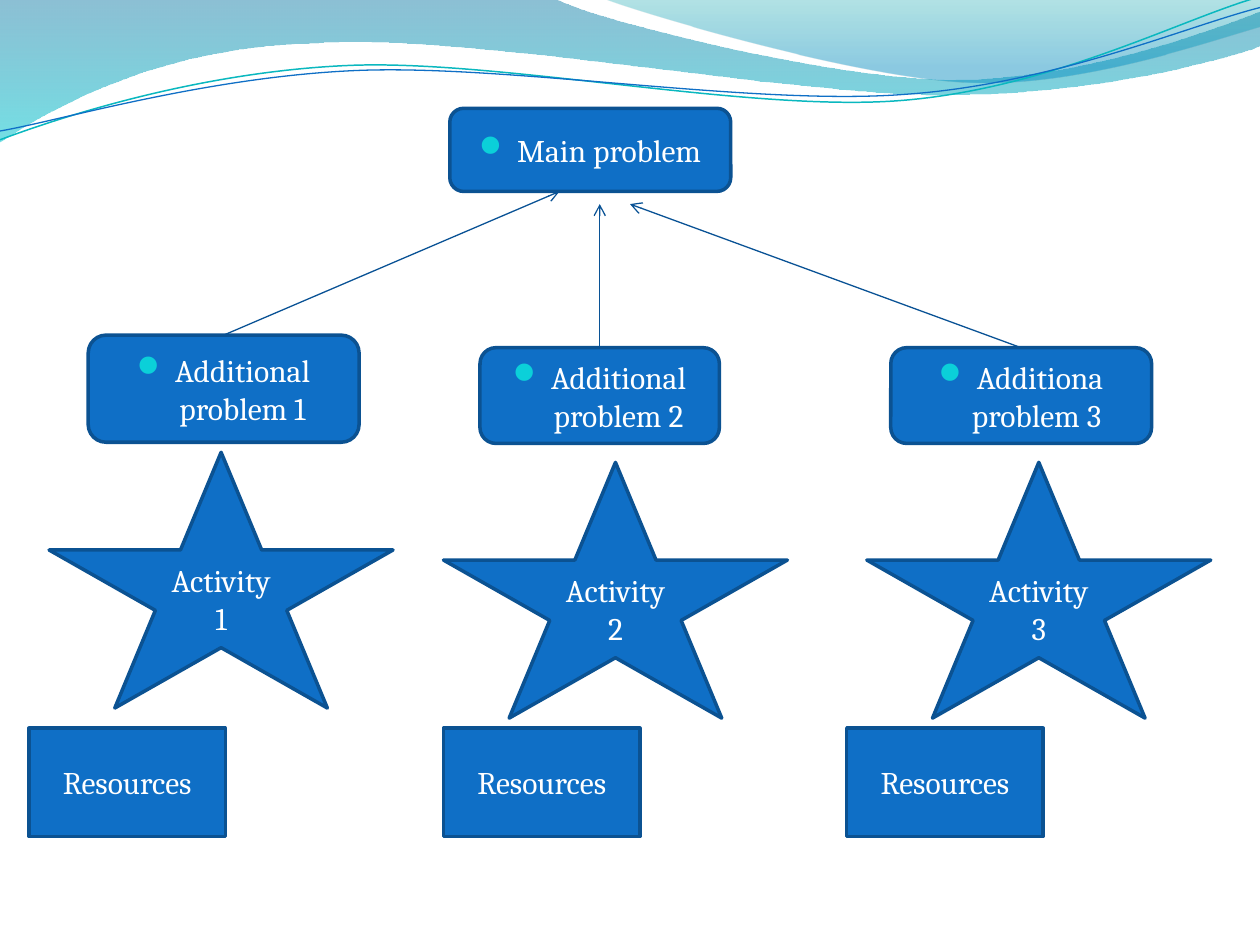
"""Build a problem tree slide with activities and resources under a wave header."""
from dataclasses import dataclass

import lxml.etree
import pptx
import pptx.dml.color
import pptx.enum.shapes
import pptx.enum.text
import pptx.oxml.ns
import pptx.util

Inches = pptx.util.Inches
Pt = pptx.util.Pt
RGBColor = pptx.dml.color.RGBColor
Kind = pptx.enum.shapes.MSO_SHAPE
qn = pptx.oxml.ns.qn

BLUE = RGBColor(0x0F, 0x6F, 0xC6)
EDGE = RGBColor(0x0B, 0x52, 0x92)
ARROW = RGBColor(0x09, 0x52, 0x95)
WHITE = RGBColor(0xFF, 0xFF, 0xFF)
TEAL = RGBColor(0x0A, 0xB8, 0xBF)
BULLET = RGBColor(0x0B, 0xD0, 0xD9)
DEEP_BLUE = RGBColor(0x00, 0x74, 0xA1)
AQUA = RGBColor(0x00, 0xC6, 0xCF)
DEEP_TEAL = RGBColor(0x00, 0xA1, 0xA9)
SKY = RGBColor(0x00, 0x8B, 0xBF)

BULLET_FONT = "Wingdings 2"
BULLET_MARK = chr(0xF097)

Point = tuple[float, float]


@dataclass(frozen=True)
class Stop:
    position: float
    color: RGBColor
    opacity: int


@dataclass(frozen=True)
class Wave:
    start: Point
    segments: tuple[tuple[float, ...], ...]
    stops: tuple[Stop, ...] = ()
    color: RGBColor = BLUE
    weight: float = 0.75


@dataclass(frozen=True)
class Branch:
    problem: str
    box: tuple[float, float, float, float]
    arrow_tip: Point
    activity: str
    star: Point
    resources_left: float


WAVES = (
    Wave((0, 0), (
        (4.4, -0.01),
        (4.76, 0.17, 6.64, 0.63, 7.58, 0.63),
        (8.53, 0.63, 9.58, 0.26, 10, 0.09),
        (10.01, 0.36),
        (9.83, 0.44, 8.7, 0.76, 7.46, 0.75),
        (6.22, 0.75, 3.82, 0.28, 2.57, 0.34),
        (1.29, 0.36, 0.46, 0.83, -0.01, 1.13),
    ), stops=(Stop(0, DEEP_BLUE, 45), Stop(1, AQUA, 55))),
    Wave((4.79, -0.01), (
        (5.09, 0.11, 6.82, 0.62, 7.69, 0.65),
        (8.56, 0.69, 9.61, 0.32, 10, 0.21),
        (10, 0),
    ), stops=(Stop(0, DEEP_TEAL, 30), Stop(0.8, SKY, 45))),
    Wave((0, 1.11), (
        (0.48, 0.93, 1.58, 0.57, 2.77, 0.52),
        (3.95, 0.47, 5.93, 0.89, 7.13, 0.8),
        (8.33, 0.71, 9.38, 0.15, 9.98, -0.02),
    ), color=TEAL, weight=0.85),
    Wave((0, 1.04), (
        (0.47, 0.96, 1.64, 0.61, 2.83, 0.56),
        (4.03, 0.51, 5.97, 0.84, 7.17, 0.75),
        (8.36, 0.67, 9.41, 0.21, 10, 0.06),
    )),
)

BRANCHES = (
    Branch("Additional problem 1", (0.7, 2.66, 2.15, 0.85), (4.44, 1.52),
           "Activity 1", (0.39, 3.59), 0.23),
    Branch("Additional problem 2", (3.81, 2.76, 1.9, 0.76), (4.76, 1.62),
           "Activity 2", (3.52, 3.67), 3.52),
    Branch("Additiona problem 3 ", (7.07, 2.76, 2.07, 0.76), (5, 1.62),
           "Activity 3", (6.88, 3.67), 6.72),
)


def bend_segments(band, segments: tuple[tuple[float, ...], ...]) -> None:
    """Turn the straight sides of a freeform into cubic curves where given."""
    sides = list(band.element.spPr.iter(qn("a:lnTo")))
    for side, segment in zip(sides, segments):
        if len(segment) == 2:
            continue
        curve = lxml.etree.Element(qn("a:cubicBezTo"))
        for x, y in zip(segment[::2], segment[1::2]):
            lxml.etree.SubElement(curve, qn("a:pt"), x=str(Inches(x) - band.left),
                                  y=str(Inches(y) - band.top))
        side.getparent().replace(side, curve)


def draw_wave(slide, wave: Wave) -> None:
    """Draw a gradient band or an open line of the header."""
    builder = slide.shapes.build_freeform(*map(Inches, wave.start))
    ends = [(Inches(segment[-2]), Inches(segment[-1])) for segment in wave.segments]
    builder.add_line_segments(ends, close=bool(wave.stops))
    band = builder.convert_to_shape()
    bend_segments(band, wave.segments)
    band.shadow.inherit = False
    if not wave.stops:
        band.fill.background()
        band.line.color.rgb = wave.color
        band.line.width = Pt(wave.weight)
        return
    band.line.fill.background()
    band.fill.gradient()
    band.fill.gradient_angle = 270
    for target, stop in zip(band.fill.gradient_stops, wave.stops):
        target.position = stop.position
        target.color.rgb = stop.color
    for color, stop in zip(band.element.spPr.iter(qn("a:srgbClr")), wave.stops):
        lxml.etree.SubElement(color, qn("a:alpha"), val=str(stop.opacity * 1000))


def add_bullet(paragraph) -> None:
    """Give a paragraph a round coloured bullet with a hanging indent."""
    properties = paragraph.font._element.getparent()
    indent = Inches(0.3)
    properties.set("marL", str(indent))
    properties.set("indent", str(-indent))
    color = lxml.etree.Element(qn("a:buClr"))
    lxml.etree.SubElement(color, qn("a:srgbClr"), val=str(BULLET))
    marks = (
        color,
        lxml.etree.Element(qn("a:buSzPct"), val="95000"),
        lxml.etree.Element(qn("a:buFont"), typeface=BULLET_FONT),
        lxml.etree.Element(qn("a:buChar"), char=BULLET_MARK),
    )
    for index, mark in enumerate(marks):
        properties.insert(index, mark)


def draw_node(slide, kind, box: tuple[float, float, float, float], label: str,
              bulleted: bool = False) -> None:
    """Draw a blue shape with a centred label."""
    node = slide.shapes.add_shape(kind, *map(Inches, box))
    node.shadow.inherit = False
    node.fill.solid()
    node.fill.fore_color.rgb = BLUE
    node.line.color.rgb = EDGE
    node.line.width = Pt(2)
    node.text_frame.word_wrap = True
    node.text_frame.vertical_anchor = pptx.enum.text.MSO_ANCHOR.MIDDLE
    paragraph = node.text_frame.paragraphs[0]
    paragraph.text = label
    paragraph.alignment = pptx.enum.text.PP_ALIGN.CENTER
    paragraph.font.name = "Cambria"
    paragraph.font.size = Pt(18)
    paragraph.font.color.rgb = WHITE
    if bulleted:
        add_bullet(paragraph)


def draw_arrow(slide, start: Point, tip: Point) -> None:
    """Draw a thin line with an open arrowhead at its tip."""
    arrow = slide.shapes.add_connector(
        pptx.enum.shapes.MSO_CONNECTOR.STRAIGHT, *map(Inches, start + tip))
    arrow.line.color.rgb = ARROW
    arrow.line.width = Pt(0.75)
    lxml.etree.SubElement(arrow.line._get_or_add_ln(), qn("a:tailEnd"), type="arrow")
    lxml.etree.SubElement(arrow._element.spPr, qn("a:effectLst"))


def main() -> None:
    """Build and save the slide."""
    deck = pptx.Presentation()
    deck.slide_width, deck.slide_height = Inches(10), Inches(7.5)
    slide = deck.slides.add_slide(deck.slide_layouts[6])
    for wave in WAVES:
        draw_wave(slide, wave)
    draw_node(slide, Kind.ROUNDED_RECTANGLE, (3.57, 0.86, 2.23, 0.66), "Main problem", True)
    for branch in BRANCHES:
        left, top, width, _ = branch.box
        draw_node(slide, Kind.ROUNDED_RECTANGLE, branch.box, branch.problem, True)
        draw_arrow(slide, (left + width / 2, top), branch.arrow_tip)
        draw_node(slide, Kind.STAR_5_POINT, (*branch.star, 2.73, 2.03), branch.activity)
        draw_node(slide, Kind.RECTANGLE, (branch.resources_left, 5.78, 1.56, 0.86), "Resources")
    deck.save("out.pptx")


if __name__ == "__main__":
    main()
